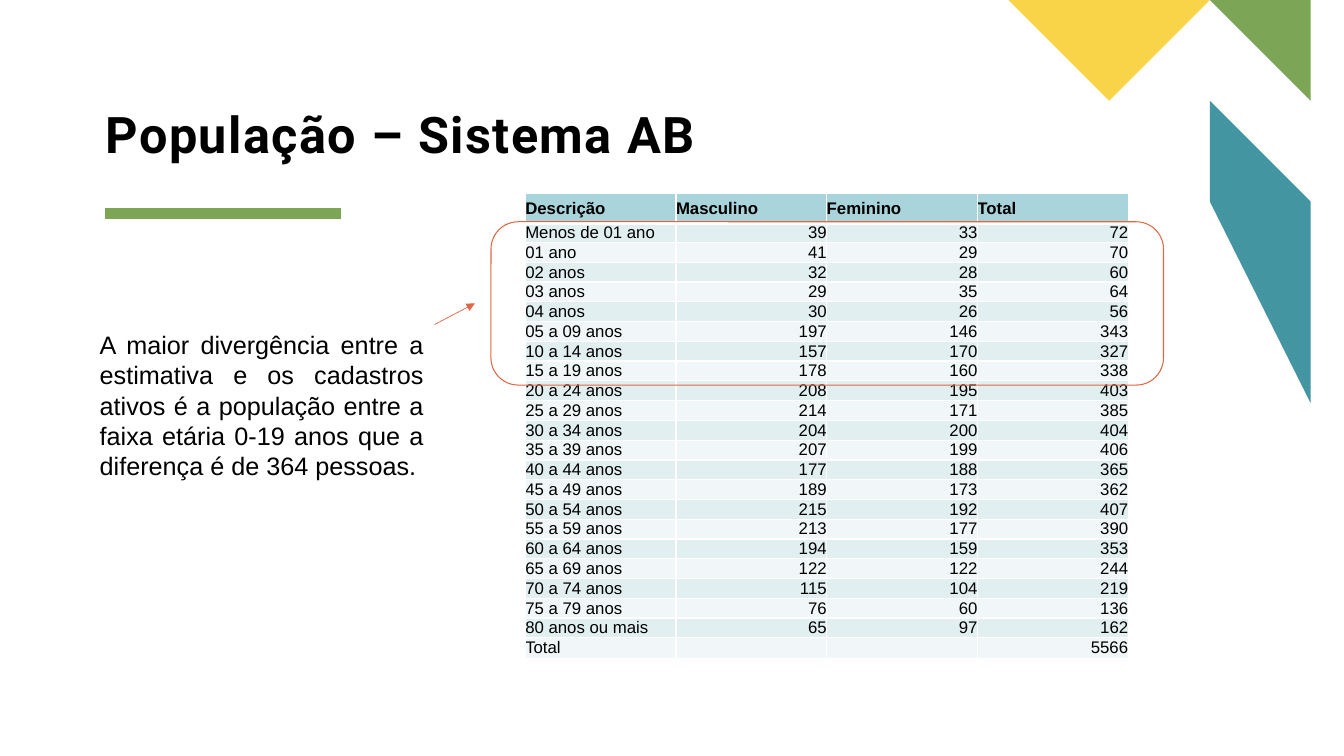
from lxml.etree import SubElement
from pptx import Presentation
from pptx.dml.color import RGBColor
from pptx.enum.shapes import MSO_CONNECTOR as Link, MSO_SHAPE as Shape
from pptx.enum.text import MSO_ANCHOR as Anchor, MSO_AUTO_SIZE as Fit, PP_ALIGN as Align
from pptx.oxml.ns import qn
from pptx.util import Inches, Pt

HEADS = ["Descrição", "Masculino", "Feminino", "Total"]
AGES = [
    ("Menos de 01 ano", 39, 33, 72),
    ("01 ano", 41, 29, 70),
    ("02 anos", 32, 28, 60),
    ("03 anos", 29, 35, 64),
    ("04 anos", 30, 26, 56),
    ("05 a 09 anos", 197, 146, 343),
    ("10 a 14 anos", 157, 170, 327),
    ("15 a 19 anos", 178, 160, 338),
    ("20 a 24 anos", 208, 195, 403),
    ("25 a 29 anos", 214, 171, 385),
    ("30 a 34 anos", 204, 200, 404),
    ("35 a 39 anos", 207, 199, 406),
    ("40 a 44 anos", 177, 188, 365),
    ("45 a 49 anos", 189, 173, 362),
    ("50 a 54 anos", 215, 192, 407),
    ("55 a 59 anos", 213, 177, 390),
    ("60 a 64 anos", 194, 159, 353),
    ("65 a 69 anos", 122, 122, 244),
    ("70 a 74 anos", 115, 104, 219),
    ("75 a 79 anos", 76, 60, 136),
    ("80 anos ou mais", 65, 97, 162),
    ("Total", "", "", 5566),
]
NOTE = ("A maior divergência entre a estimativa e os cadastros ativos é a "
        "população entre a faixa etária 0-19 anos que a diferença é de 364 pessoas.")


def color(code):
    return RGBColor.from_string(code)


def write(frame, text, size=12, font="Arial", bold=False, align=Align.LEFT,
          space=None, track=0):
    para = frame.paragraphs[0]
    para.alignment = align
    para.line_spacing = space
    if not text:
        # An empty cell keeps its row low only with a sized paragraph end.
        SubElement(para._p, qn("a:endParaRPr"), sz=str(size * 100))
        return
    run = para.add_run()
    run.text = text
    run.font.size = Pt(size)
    run.font.name = font
    run.font.bold = bold
    run.font.color.rgb = color("000000")
    if track:
        run._r.get_or_add_rPr().set("spc", str(track * 100))


def place(shape, left, top, width, height):
    shape.left, shape.top = Inches(left), Inches(top)
    shape.width, shape.height = Inches(width), Inches(height)


def pad(part):
    part.margin_left = part.margin_right = 0
    part.margin_top = part.margin_bottom = 0


def edge(cell, side, width):
    props = cell._tc.get_or_add_tcPr()
    line = SubElement(props, qn("a:ln" + side), w=str(Pt(width)))
    fill = SubElement(line, qn("a:solidFill"))
    SubElement(fill, qn("a:srgbClr"), val="FFFFFF")


class Page:
    green, teal, gold, red = "7CA655", "4495A2", "F9D448", "E06742"
    head, bands = "A9D4DB", ("F1F7F8", "E2EFF1")

    def __init__(self, deck):
        self.slide = deck.slides.add_slide(deck.slide_layouts[5])
        self.shapes = self.slide.shapes

    def poly(self, points, fill):
        pen = self.shapes.build_freeform(*points[0], scale=Inches(1))
        pen.add_line_segments(points[1:], close=True)
        shape = pen.convert_to_shape()
        shape.shadow.inherit = False
        shape.fill.solid()
        shape.fill.fore_color.rgb = color(fill)
        shape.line.fill.background()

    def line(self, start, end, hue, width, arrow=False):
        link = self.shapes.add_connector(
            Link.STRAIGHT, *(Inches(n) for n in start + end))
        link.line.color.rgb = color(hue)
        link.line.width = Pt(width)
        if arrow:
            SubElement(link.line._get_or_add_ln(), qn("a:tailEnd"), type="triangle")
        SubElement(link._element.spPr, qn("a:effectLst"))

    def title(self, text, *box):
        shape = self.shapes.title
        place(shape, *box)
        frame = shape.text_frame
        pad(frame)
        frame.auto_size = Fit.NONE
        frame.vertical_anchor = Anchor.BOTTOM
        write(frame, text, size=36, font="Roboto", bold=True, space=0.9, track=1)

    def note(self, text, *box):
        frame = self.shapes.add_textbox(*(Inches(n) for n in box)).text_frame
        frame.word_wrap = True
        frame.auto_size = Fit.SHAPE_TO_FIT_TEXT
        write(frame, text, size=18, align=Align.JUSTIFY)

    def frame(self, *box):
        shape = self.shapes.add_shape(
            Shape.ROUNDED_RECTANGLE, *(Inches(n) for n in box))
        shape.shadow.inherit = False
        shape.fill.background()
        shape.line.color.rgb = color(self.red)
        shape.line.width = Pt(0.75)

    def table(self, rows, left, top, width, first, rest):
        """Draw rows under a header of height first; the others share rest."""
        grid = self.shapes.add_table(
            len(rows), len(rows[0]), Inches(left), Inches(top),
            Inches(width), Inches(first + rest)).table
        for col in grid.columns:
            col.width = Inches(width / len(rows[0]))
        for r, row in enumerate(rows):
            grid.rows[r].height = Inches(rest / (len(rows) - 1) if r else first)
            for c, value in enumerate(row):
                self.cell(grid.cell(r, c), r, c, str(value))

    def cell(self, cell, r, c, text):
        pad(cell)
        cell.vertical_anchor = Anchor.MIDDLE
        for side in "LRTB":
            edge(cell, side, 3 if (r, side) in ((0, "B"), (1, "T")) else 1)
        cell.fill.solid()
        cell.fill.fore_color.rgb = color(self.bands[r % 2] if r else self.head)
        write(cell.text_frame, text, bold=r == 0,
              align=Align.RIGHT if r and c else Align.LEFT)


def main():
    deck = Presentation()
    deck.slide_width, deck.slide_height = Inches(13.33), Inches(7.5)
    page = Page(deck)
    page.line((1.04, 2.12), (3.38, 2.12), page.green, 8)
    page.poly([(13.33, 3.63), (13.33, 2.41), (12.12, 1.19), (11.5, 1.8)], page.teal)
    page.poly([(13.33, 1.19), (13.33, 0), (12.15, 0)], page.green)
    page.poly([(9.7, 0), (10.89, 1.19), (12.09, 0)], page.gold)
    page.title("População – Sistema AB", 1.05, 0.96, 5.98, 0.67)
    page.table([HEADS, *AGES], 5.21, 1.92, 5.98, 0.29, 4.32)
    page.frame(4.87, 2.2, 6.67, 1.62)
    page.note(NOTE, 0.89, 3.22, 3.41, 1.62)
    page.line((4.31, 3.22), (4.71, 3.01), page.red, 0.5, arrow=True)
    deck.save("out.pptx")


if __name__ == "__main__":
    main()
